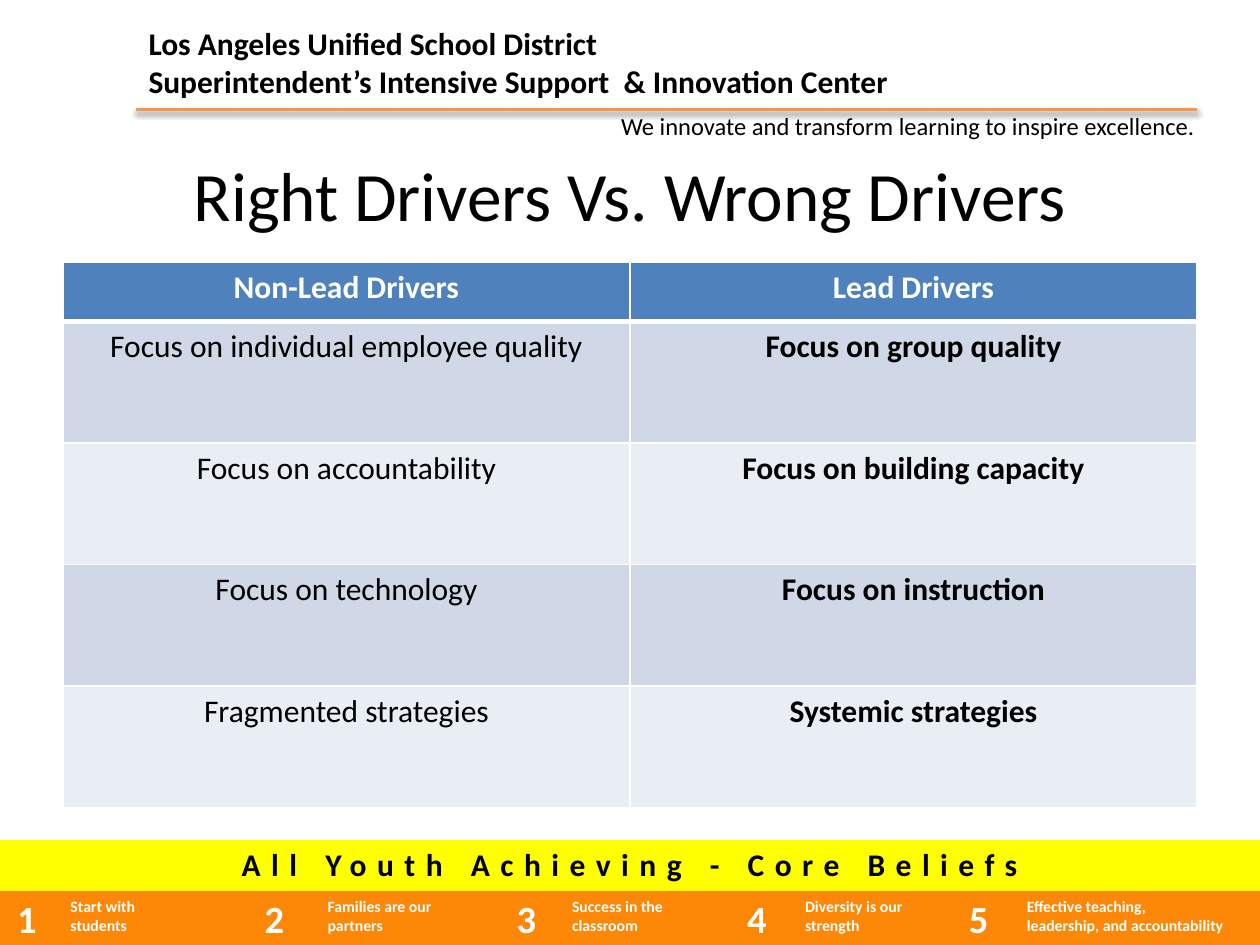
from lxml.etree import SubElement
from pptx import Presentation
from pptx.dml.color import RGBColor
from pptx.enum.shapes import MSO_CONNECTOR as Connector
from pptx.enum.text import MSO_ANCHOR as Anchor, MSO_AUTO_SIZE as AutoSize, PP_ALIGN as Align
from pptx.oxml.ns import qn
from pptx.util import Pt

COLORS = {
    "black": "000000", "white": "FFFFFF", "header": "4F81BD", "band_dark": "D0D8E8",
    "band_light": "E9EDF4", "rule": "F79646", "yellow": "FFFF00", "orange": "FD8807",
}
FONT = "Calibri"
NO_STYLE = "{2D5ABB26-0587-4C30-8999-92F81FD0307C}"

TITLE = "Right Drivers Vs. Wrong Drivers"
ORGANIZATION = [
    "Los Angeles Unified School District",
    "Superintendent’s Intensive Support  & Innovation Center",
]
TAGLINE = "We innovate and transform learning to inspire excellence."
DRIVERS = [
    ("Non-Lead Drivers", "Lead Drivers"),
    ("Focus on individual employee quality", "Focus on group quality"),
    ("Focus on accountability", "Focus on building capacity"),
    ("Focus on technology", "Focus on instruction"),
    ("Fragmented strategies", "Systemic strategies"),
]
BELIEFS_HEADING = "All Youth Achieving - Core Beliefs"
BELIEFS = [
    ("1 ", ["Start with", "students"]),
    ("2", ["Families are our", "partners"]),
    ("3", ["Success in the", "classroom"]),
    ("4", ["Diversity is our strength"]),
    ("5", ["Effective teaching,", "leadership, and accountability"]),
]
BELIEF_WIDTHS = [33.1, 110.9, 36, 108, 31.7, 100.1, 33.1, 93.6, 33.1, 140.4]


def color(name):
    return RGBColor.from_string(COLORS[name])


def write(frame, lines, size, fill="black", bold=False, align=Align.LEFT, spacing=0):
    for index, line in enumerate(lines):
        paragraph = frame.paragraphs[0] if index == 0 else frame.add_paragraph()
        paragraph.alignment = align
        run = paragraph.add_run()
        run.text = line
        run.font.name = FONT
        run.font.size = Pt(size)
        run.font.bold = bold
        run.font.color.rgb = color(fill)
        if spacing:
            run._r.get_or_add_rPr().set("spc", str(spacing * 100))


def add_text(slide, box, lines, size, **style):
    shape = slide.shapes.add_textbox(*map(Pt, box))
    shape.text_frame.word_wrap = True
    write(shape.text_frame, lines, size, **style)
    return shape


def add_plain_table(slide, left, top, widths, heights):
    frame = slide.shapes.add_table(
        len(heights), len(widths), Pt(left), Pt(top), Pt(sum(widths)), Pt(sum(heights)))
    table = frame.table
    table._tbl.tblPr.find(qn("a:tableStyleId")).text = NO_STYLE
    for column, width in zip(table.columns, widths):
        column.width = Pt(width)
    for row, height in zip(table.rows, heights):
        row.height = Pt(height)
    return table


def fill_cell(cell, name):
    cell.fill.solid()
    cell.fill.fore_color.rgb = color(name)


def add_borders(cell, **widths):
    properties = cell._tc.get_or_add_tcPr()
    for index, side in enumerate(("lnL", "lnR", "lnT", "lnB")):
        line = properties.makeelement(qn("a:" + side), {"w": str(Pt(widths.get(side, 1)))})
        properties.insert(index, line)
        solid = SubElement(line, qn("a:solidFill"))
        SubElement(solid, qn("a:srgbClr"), val=COLORS["white"])


def add_header(slide):
    organization = add_text(slide, (77.8, 10, 468, 51), ORGANIZATION, 18, bold=True)
    organization.text_frame.auto_size = AutoSize.SHAPE_TO_FIT_TEXT
    rule = slide.shapes.add_connector(Connector.STRAIGHT, Pt(77.8), Pt(62.6), Pt(684), Pt(62.6))
    rule.line.color.rgb = color("rule")
    rule.line.width = Pt(2)
    effects = SubElement(rule._element.spPr, qn("a:effectLst"))
    shadow = SubElement(effects, qn("a:outerShdw"), blurRad=str(Pt(3.1)), dist=str(Pt(1.6)),
                        dir="5400000", rotWithShape="0")
    shade = SubElement(shadow, qn("a:srgbClr"), val=COLORS["black"])
    SubElement(shade, qn("a:alpha"), val="38000")
    add_text(slide, (347.8, 59.8, 349.2, 28.8), [TAGLINE], 14)


def add_title(slide):
    title = slide.shapes.title
    title.left, title.top, title.width, title.height = map(Pt, (36, 84, 648, 54))
    title.text_frame.vertical_anchor = Anchor.MIDDLE
    title.text_frame.auto_size = AutoSize.NONE
    write(title.text_frame, [TITLE], 39.6, align=Align.CENTER)


def add_drivers(slide):
    table = add_plain_table(slide, 36, 150, [324, 324], [33.6] + [69.5] * 4)
    for row, texts in enumerate(DRIVERS):
        is_header = row == 0
        band = "header" if is_header else ("band_light", "band_dark")[row % 2]
        for column, text in enumerate(texts):
            cell = table.cell(row, column)
            write(cell.text_frame, [text], 18, fill="white" if is_header else "black",
                  bold=is_header or column == 1, align=Align.CENTER)
            fill_cell(cell, band)
            add_borders(cell, lnB=3 if is_header else 1, lnT=3 if row == 1 else 1)


def add_beliefs(slide):
    table = add_plain_table(slide, 0, 480, BELIEF_WIDTHS, [29.2, 34])
    heading = table.cell(0, 0)
    heading.merge(table.cell(0, len(BELIEF_WIDTHS) - 1))
    fill_cell(heading, "yellow")
    write(heading.text_frame, [BELIEFS_HEADING], 18, bold=True, align=Align.CENTER, spacing=6)
    for index, (number, lines) in enumerate(BELIEFS):
        number_cell, text_cell = (table.cell(1, 2 * index + offset) for offset in (0, 1))
        write(number_cell.text_frame, [number], 22, fill="white", bold=True,
              align=Align.RIGHT if index == 0 else Align.LEFT)
        write(text_cell.text_frame, lines, 9, fill="white", bold=True)
        fill_cell(number_cell, "orange")
        fill_cell(text_cell, "orange")


def main():
    presentation = Presentation()
    presentation.slide_width, presentation.slide_height = Pt(720), Pt(540)
    slide = presentation.slides.add_slide(presentation.slide_layouts[5])
    add_beliefs(slide)
    add_header(slide)
    add_title(slide)
    add_drivers(slide)
    presentation.save("out.pptx")


if __name__ == "__main__":
    main()
